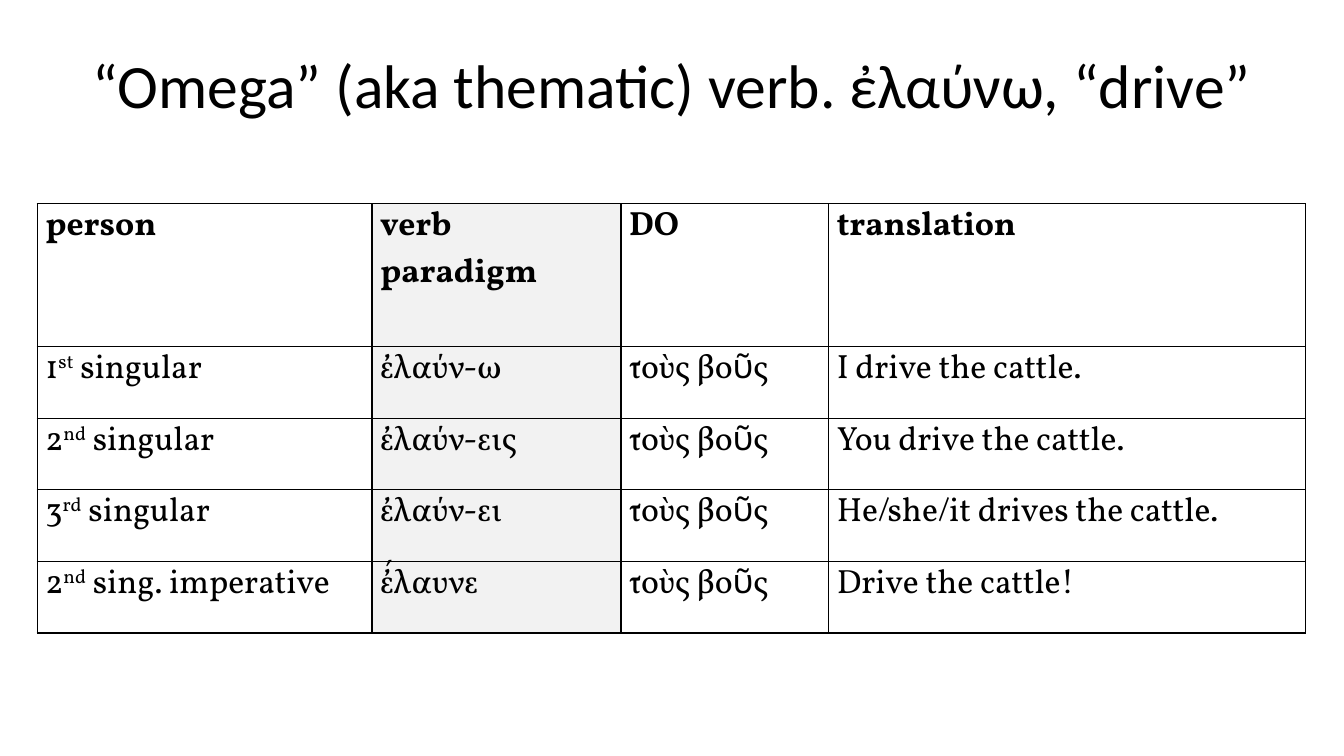
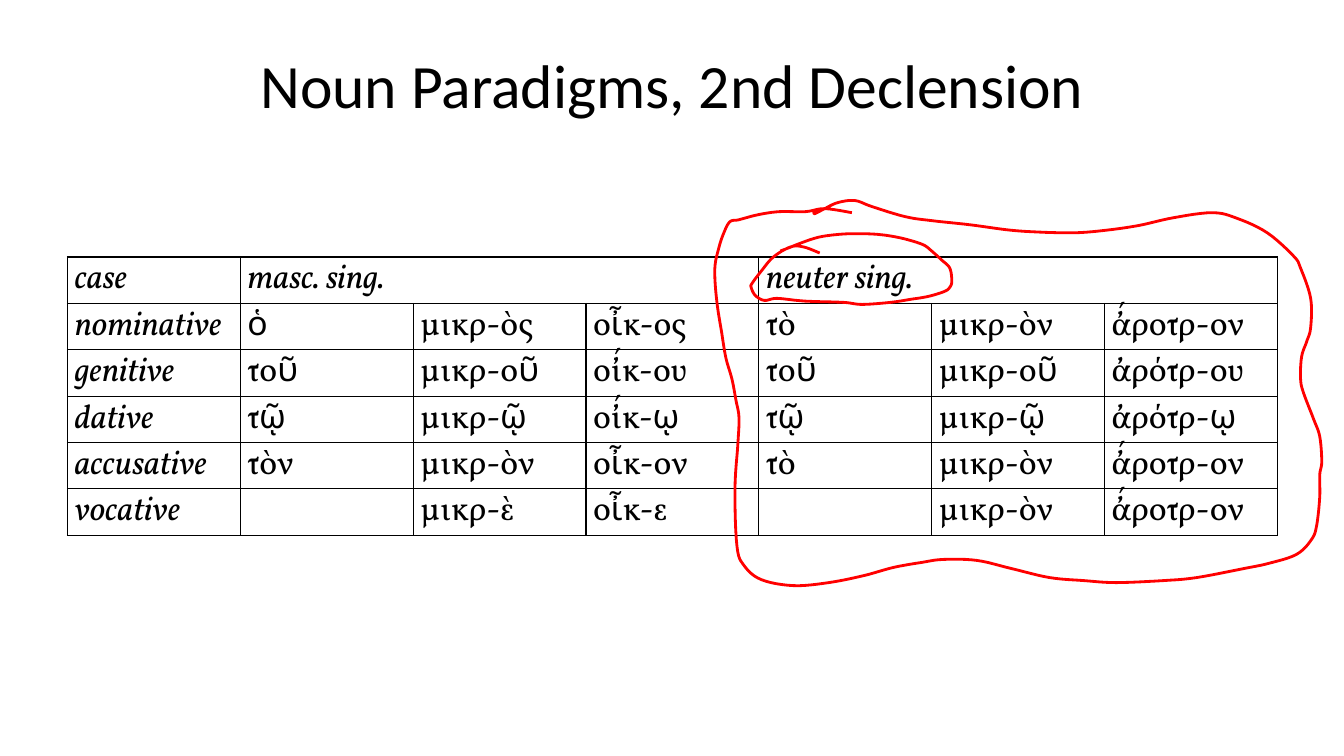
from dataclasses import dataclass

from lxml import etree
from pptx import Presentation
from pptx import util as u
from pptx.dml import color
from pptx.enum import text
from pptx.oxml import ns

COLOURS = {"ink": "000000", "paper": "FFFFFF", "shade": "F2F2F2", "pen": "FF0000"}
TITLE_FONT = "Calibri"
TABLE_FONT = "Vollkorn"
SMOOTH_STEPS = 6


@dataclass(frozen=True)
class Grid:
    left: float
    top: float
    widths: tuple[float, ...]
    heights: tuple[float, ...]
    rows: tuple[tuple[str, ...], ...]
    inset: float
    merges: tuple[tuple[int, int], ...] = ()
    bold_header: bool = False
    italic_labels: bool = False
    shaded_column: int | None = None


@dataclass(frozen=True)
class Stroke:
    points: tuple[tuple[float, float], ...]


VERB_GRID = Grid(
    left=0.37, top=2.02, widths=(3.32, 2.47, 2.06, 4.73),
    heights=(1.42,) + (0.71,) * 4, inset=0.08,
    bold_header=True, shaded_column=1,
    rows=(
        ("person", "verb paradigm", "DO", "translation"),
        ("1^st^ singular", "ἐλαύν-ω", "τοὺς βοῦς", "Ι drive the cattle."),
        ("2^nd^ singular", "ἐλαύν-εις", "τοὺς βοῦς", "You drive the cattle."),
        ("3^rd^ singular", "ἐλαύν-ει", "τοὺς βοῦς", "He/she/it drives the cattle."),
        ("2^nd^ sing. imperative", "ἔλαυνε", "τοὺς βοῦς", "Drive the cattle!"),
    ),
)

NOUN_GRID = Grid(
    left=0.67, top=2.55, widths=(12 / 7,) * 7, heights=(0.46,) * 6, inset=0.07,
    merges=((1, 3), (4, 6)), italic_labels=True,
    rows=(
        ("case", "masc. sing.", "", "", "neuter sing.", "", ""),
        ("nominative", "ὁ", "μικρ-ὸς", "οἶκ-ος", "τὸ", "μικρ-ὸν", "ἄροτρ-ον"),
        ("genitive", "τοῦ", "μικρ-οῦ", "οἴκ-ου", "τοῦ", "μικρ-οῦ", "ἀρότρ-ου"),
        ("dative", "τῷ", "μικρ-ῷ", "οἴκ-ῳ", "τῷ", "μικρ-ῷ", "ἀρότρ-ῳ"),
        ("accusative", "τὸν", "μικρ-ὸν", "οἶκ-ον", "τὸ", "μικρ-ὸν", "ἄροτρ-ον"),
        ("vocative", "", "μικρ-ὲ", "οἶκ-ε", "", "μικρ-ὸν", "ἄροτρ-ον"),
    ),
)

NEUTER_LOOP = Stroke((
    (8.45, 2.11), (8.18, 2.07), (7.99, 2.1), (7.73, 2.1), (7.52, 2.13),
    (7.33, 2.18), (7.24, 2.2), (7.18, 2.31), (7.13, 2.46), (7.09, 2.67),
    (7.11, 2.99), (7.16, 3.31), (7.2, 3.55), (7.26, 3.76), (7.3, 3.97),
    (7.33, 4.14), (7.32, 4.39), (7.29, 4.85), (7.31, 5.42), (7.38, 5.61),
    (7.55, 5.75), (7.87, 5.81), (8.22, 5.78), (8.57, 5.71), (8.86, 5.63),
    (9.14, 5.58), (9.36, 5.55), (9.69, 5.56), (10.03, 5.64), (10.41, 5.73),
    (10.75, 5.76), (11.07, 5.78), (11.54, 5.76), (11.87, 5.73), (12.34, 5.64),
    (12.58, 5.59), (12.86, 5.5), (13.01, 5.35), (13.06, 5.21), (13.09, 4.93),
    (13.09, 4.71), (13.11, 4.58), (13.09, 4.33), (13.03, 4.16), (12.93, 3.9),
    (12.9, 3.76), (12.91, 3.54), (12.96, 3.39), (13, 3.25), (13, 2.96),
    (12.9, 2.66), (12.83, 2.54), (12.57, 2.31), (12.28, 2.17), (12.03, 2.11),
    (11.64, 2.16), (11.28, 2.24), (10.92, 2.29), (10.63, 2.31), (10.25, 2.3),
    (9.99, 2.28), (9.62, 2.23), (9.25, 2.19), (8.98, 2.15), (8.65, 2.05),
    (8.48, 1.99), (8.31, 2.01), (8.18, 2.07), (8.08, 2.12), (8.08, 2.09),
))

HEADING_LOOP = Stroke((
    (8.13, 2.51), (7.97, 2.45), (7.84, 2.45), (7.67, 2.55), (7.55, 2.69),
    (7.46, 2.81), (7.45, 2.85), (7.49, 2.93), (7.58, 2.98), (7.7, 2.96),
    (7.9, 2.98), (8.04, 2.99), (8.37, 3), (8.55, 3.02), (8.83, 3),
    (9.03, 2.97), (9.21, 2.94), (9.37, 2.89), (9.42, 2.85), (9.44, 2.79),
    (9.42, 2.66), (9.34, 2.58), (9.24, 2.49), (9.16, 2.43), (9.01, 2.38),
    (8.88, 2.35), (8.75, 2.33), (8.61, 2.32), (8.4, 2.32), (8.19, 2.34),
    (8.06, 2.37), (7.92, 2.42), (7.82, 2.46), (7.74, 2.49),
))


def colour(name: str) -> color.RGBColor:
    return color.RGBColor.from_string(COLOURS[name])


def write_text(para, content: str, *, font: str, size: float,
               bold: bool = False, italic: bool = False, align=None) -> None:
    para.alignment = align
    for index, part in enumerate(content.split("^")):
        if not part:
            continue
        span = para.add_run()
        span.text = part
        span.font.name = font
        span.font.size = u.Pt(size)
        span.font.bold = bold
        span.font.italic = italic
        span.font.color.rgb = colour("ink")
        if index % 2:
            span.font._element.set("baseline", "30000")


def add_page(deck, title: str):
    page = deck.slides.add_slide(deck.slide_layouts[6])
    box = page.shapes.add_textbox(u.Inches(0.67), u.Inches(0.08),
                                  u.Inches(12), u.Inches(1.17))
    frame = box.text_frame
    frame.word_wrap = True
    frame.vertical_anchor = text.MSO_ANCHOR.BOTTOM
    write_text(frame.paragraphs[0], title, font=TITLE_FONT, size=44,
               align=text.PP_ALIGN.CENTER)
    return page


def add_borders(cell) -> None:
    properties = cell._tc.get_or_add_tcPr()
    for side in ("a:lnL", "a:lnR", "a:lnT", "a:lnB"):
        line = etree.SubElement(properties, ns.qn(side), w=str(u.Pt(1)))
        fill = etree.SubElement(line, ns.qn("a:solidFill"))
        etree.SubElement(fill, ns.qn("a:srgbClr"), val=COLOURS["ink"])


def add_grid(page, grid: Grid) -> None:
    table = page.shapes.add_table(
        len(grid.heights), len(grid.widths), u.Inches(grid.left), u.Inches(grid.top),
        u.Inches(sum(grid.widths)), u.Inches(sum(grid.heights))).table
    table.first_row = False
    table.horz_banding = False
    for column, width in zip(table.columns, grid.widths):
        column.width = u.Inches(width)
    for row, height in zip(table.rows, grid.heights):
        row.height = u.Inches(height)
    for first, last in grid.merges:
        table.cell(0, first).merge(table.cell(0, last))
    for row_index, row in enumerate(grid.rows):
        for column_index, content in enumerate(row):
            cell = table.cell(row_index, column_index)
            cell.margin_left = cell.margin_right = u.Inches(grid.inset)
            cell.margin_top = cell.margin_bottom = 0
            add_borders(cell)
            cell.fill.solid()
            shaded = column_index == grid.shaded_column
            cell.fill.fore_color.rgb = colour("shade" if shaded else "paper")
            write_text(cell.text_frame.paragraphs[0], content,
                       font=TABLE_FONT, size=24,
                       bold=grid.bold_header and row_index == 0,
                       italic=grid.italic_labels and 0 in (row_index, column_index))


def smooth(points: tuple[tuple[float, float], ...]) -> list[tuple[float, float]]:
    padded = (points[0], *points, points[-1])
    curve = [points[0]]
    for before, start, end, after in zip(padded, padded[1:], padded[2:], padded[3:]):
        for step in range(1, SMOOTH_STEPS + 1):
            t = step / SMOOTH_STEPS
            curve.append(tuple(
                b + t * (c - a) / 2 + t**2 * (2 * a - 5 * b + 4 * c - d) / 2
                + t**3 * (3 * b - a - 3 * c + d) / 2
                for a, b, c, d in zip(before, start, end, after)))
    return curve


def add_stroke(page, stroke: Stroke) -> None:
    start, *rest = [(u.Inches(x), u.Inches(y)) for x, y in smooth(stroke.points)]
    builder = page.shapes.build_freeform(*start)
    builder.add_line_segments(rest, close=False)
    loop = builder.convert_to_shape()
    loop.shadow.inherit = False
    loop.fill.background()
    loop.line.color.rgb = colour("pen")
    loop.line.width = u.Pt(2)


def main() -> None:
    deck = Presentation()
    deck.slide_width = u.Inches(13.33)
    deck.slide_height = u.Inches(7.5)
    verb_page = add_page(deck, "“Omega” (aka thematic) verb. ἐλαύνω, “drive”")
    add_grid(verb_page, VERB_GRID)
    noun_page = add_page(deck, "Noun Paradigms, 2nd Declension")
    add_grid(noun_page, NOUN_GRID)
    for stroke in (NEUTER_LOOP, HEADING_LOOP):
        add_stroke(noun_page, stroke)
    deck.save("out.pptx")


if __name__ == "__main__":
    main()
